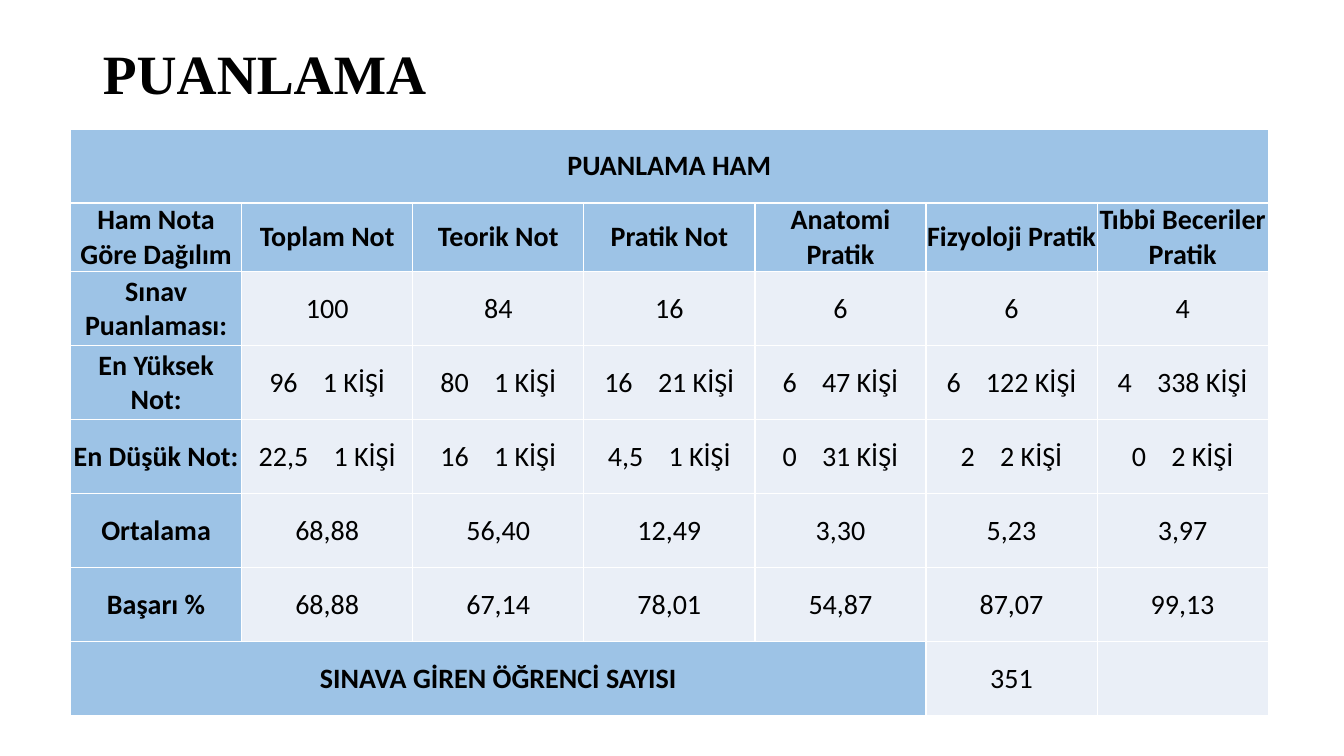
from dataclasses import dataclass

from lxml.etree import SubElement
from pptx import Presentation
from pptx.dml.color import RGBColor
from pptx.enum.text import MSO_ANCHOR as Anchor, PP_ALIGN as Align
from pptx.oxml.ns import qn
from pptx.shapes.autoshape import Shape
from pptx.slide import Slide
from pptx.table import _Cell as Cell
from pptx.text.text import _Run as Run
from pptx.util import Inches, Pt


@dataclass(frozen=True)
class Theme:
    heading_fill: str = "9DC3E6"
    value_fill: str = "EAEFF7"
    border: str = "FFFFFF"
    text: str = "000000"
    title_font: str = "Times New Roman"
    table_font: str = "Calibri"
    title_size: float = 39.6
    table_size: float = 20
    border_width: float = 1
    gap_spacing: float = 13.5


@dataclass(frozen=True)
class Entry:
    text: str
    people: int = 0
    heading: bool = False
    span: int = 1


@dataclass(frozen=True)
class ScoreRow:
    label: str
    scores: tuple[str, ...]
    people: tuple[int, ...] = (0,) * 6

    def entries(self) -> list[Entry]:
        values = [Entry(score, count) for score, count in zip(self.scores, self.people)]
        return [Entry(self.label, heading=True), *values]


THEME = Theme()
COLUMN_COUNT = 7
TABLE_WIDTH, TABLE_HEIGHT = 11.88, 5.81
COLUMN_ROW_INDEX, COLUMN_ROW_HEIGHT = 1, 0.67

COLUMN_LABELS = (
    "Ham Nota Göre Dağılım", "Toplam Not", "Teorik Not", "Pratik Not",
    "Anatomi Pratik", "Fizyoloji Pratik", "Tıbbi Beceriler Pratik",
)
SCORE_ROWS = (
    ScoreRow("Sınav Puanlaması:", ("100", "84", "16", "6", "6", "4")),
    ScoreRow("En Yüksek Not:", ("96", "80", "16", "6", "6", "4"), (1, 1, 21, 47, 122, 338)),
    ScoreRow("En Düşük Not:", ("22,5", "16", "4,5", "0", "2", "0"), (1, 1, 1, 31, 2, 2)),
    ScoreRow("Ortalama", ("68,88", "56,40", "12,49", "3,30", "5,23", "3,97")),
    ScoreRow("Başarı %", ("68,88", "67,14", "78,01", "54,87", "87,07", "99,13")),
)
TABLE_ROWS = (
    [Entry("PUANLAMA HAM", heading=True, span=COLUMN_COUNT)],
    [Entry(label, heading=True) for label in COLUMN_LABELS],
    *(row.entries() for row in SCORE_ROWS),
    [Entry("SINAVA GİREN ÖĞRENCİ SAYISI", heading=True, span=5), Entry("351"), Entry("")],
)


def format_run(run: Run, font_name: str, size: float, bold: bool) -> None:
    run.font.name = font_name
    run.font.size = Pt(size)
    run.font.bold = bold
    run.font.color.rgb = RGBColor.from_string(THEME.text)


def format_title(title: Shape) -> None:
    title.left, title.top = Inches(0.92), Inches(0.4)
    title.width, title.height = Inches(11.5), Inches(0.72)
    title.text_frame.text = "PUANLAMA"
    title.text_frame.vertical_anchor = Anchor.MIDDLE
    paragraph = title.text_frame.paragraphs[0]
    paragraph.alignment = Align.LEFT
    paragraph.line_spacing = 0.9
    format_run(paragraph.runs[0], THEME.title_font, THEME.title_size, True)


def add_borders(cell: Cell) -> None:
    properties = cell._tc.get_or_add_tcPr()
    for position, side in enumerate(("lnL", "lnR", "lnT", "lnB")):
        line = SubElement(properties, qn(f"a:{side}"), w=str(Pt(THEME.border_width)))
        fill = SubElement(line, qn("a:solidFill"))
        SubElement(fill, qn("a:srgbClr"), val=THEME.border)
        properties.insert(position, line)


def style_cell(cell: Cell, heading: bool) -> None:
    cell.margin_left = cell.margin_right = cell.margin_top = cell.margin_bottom = 0
    cell.vertical_anchor = Anchor.MIDDLE
    cell.fill.solid()
    color = THEME.heading_fill if heading else THEME.value_fill
    cell.fill.fore_color.rgb = RGBColor.from_string(color)
    add_borders(cell)


def write_entry(cell: Cell, entry: Entry) -> None:
    paragraph = cell.text_frame.paragraphs[0]
    paragraph.text = entry.text
    paragraph.alignment = Align.CENTER
    paragraph.font.size = Pt(THEME.table_size)
    if entry.people:
        gap = paragraph.add_run()
        gap.text = " "
        gap.font._element.set("spc", str(round(THEME.gap_spacing * 100)))
        paragraph.add_run().text = f"{entry.people} KİŞİ"
    for run in paragraph.runs:
        format_run(run, THEME.table_font, THEME.table_size, entry.heading)


def add_score_table(slide: Slide) -> None:
    row_count = len(TABLE_ROWS)
    frame = slide.shapes.add_table(
        row_count, COLUMN_COUNT,
        Inches(0.7), Inches(1.28), Inches(TABLE_WIDTH), Inches(TABLE_HEIGHT),
    )
    table = frame.table
    table.first_row = table.horz_banding = False
    for column in table.columns:
        column.width = Inches(TABLE_WIDTH / COLUMN_COUNT)
    for row in table.rows:
        row.height = Inches((TABLE_HEIGHT - COLUMN_ROW_HEIGHT) / (row_count - 1))
    table.rows[COLUMN_ROW_INDEX].height = Inches(COLUMN_ROW_HEIGHT)

    for row_index, entries in enumerate(TABLE_ROWS):
        column_index = 0
        for entry in entries:
            end = column_index + entry.span
            for covered in range(column_index, end):
                style_cell(table.cell(row_index, covered), entry.heading)
            cell = table.cell(row_index, column_index)
            if entry.span > 1:
                cell.merge(table.cell(row_index, end - 1))
            write_entry(cell, entry)
            column_index = end


def main() -> None:
    presentation = Presentation()
    presentation.slide_width = Inches(13.33)
    presentation.slide_height = Inches(7.5)
    title_only = presentation.slide_layouts.get_by_name("Title Only")
    slide = presentation.slides.add_slide(title_only)
    format_title(slide.shapes.title)
    add_score_table(slide)
    presentation.save("out.pptx")


if __name__ == "__main__":
    main()
